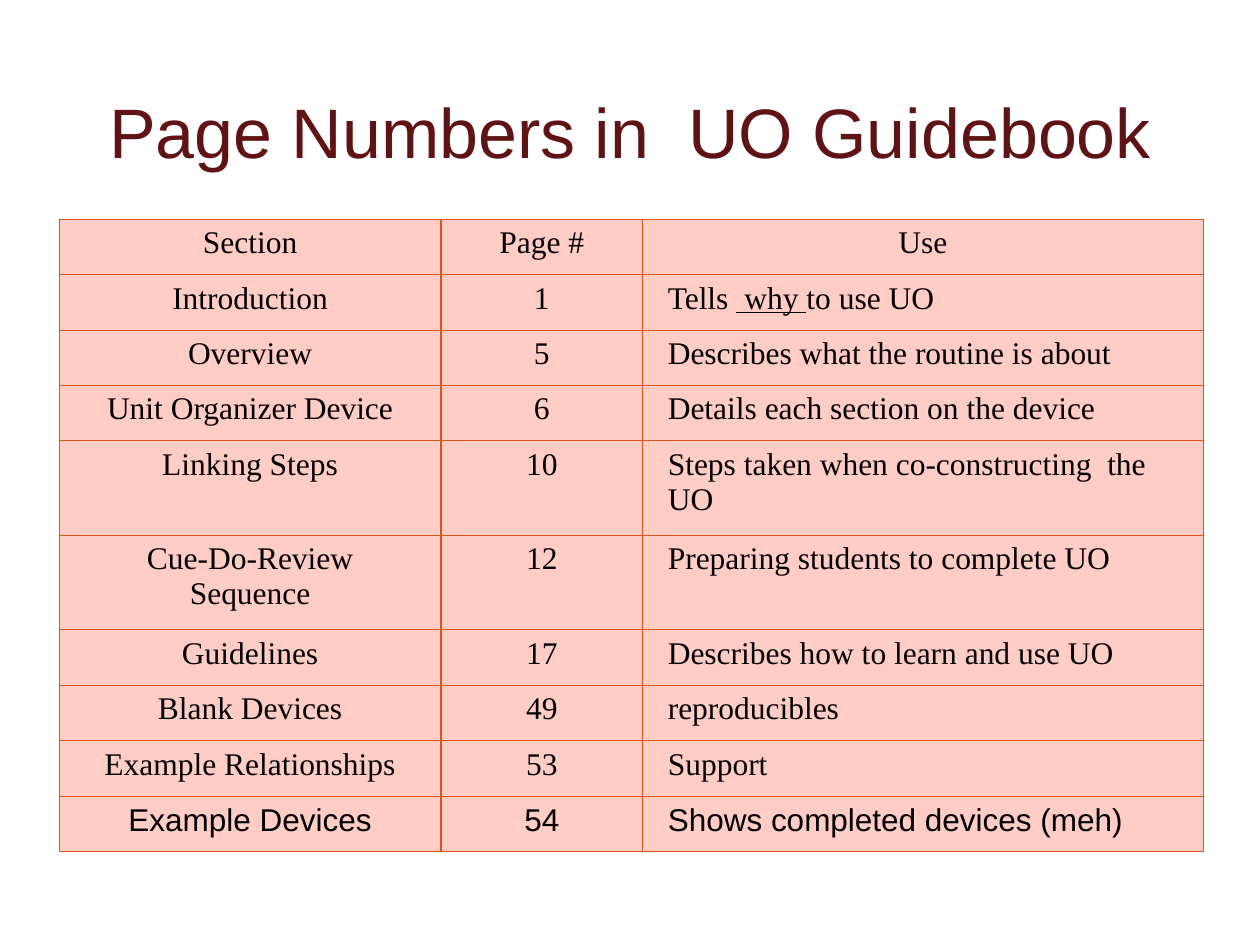
from lxml.etree import SubElement
from pptx import Presentation
from pptx.dml.color import RGBColor
from pptx.enum.text import MSO_ANCHOR, PP_ALIGN
from pptx.oxml.ns import qn
from pptx.util import Inches, Pt

COLORS = {"title": "601314", "text": "000000", "cell": "FFCCC6", "border": "DC561C"}
COLUMN_WIDTHS = [3.03, 1.6, 4.45]
TALL_SECTIONS = ["Linking Steps", "Cue-Do-Review Sequence"]
GUIDE = [
    ("Section", "Page #", ["Use"]),
    ("Introduction", "1", ["Tells ", " why ", "to use UO"]),
    ("Overview", "5", ["Describes what the routine is about"]),
    ("Unit Organizer Device", "6", ["Details each section on the device"]),
    ("Linking Steps", "10", ["Steps taken when co-constructing  the UO"]),
    ("Cue-Do-Review Sequence", "12", ["Preparing students to complete UO"]),
    ("Guidelines", "17", ["Describes how to learn and use UO"]),
    ("Blank Devices", "49", ["reproducibles"]),
    ("Example Relationships", "53", ["Support"]),
    ("Example Devices", "54", ["Shows completed devices (meh)"]),
]


def style_paragraph(paragraph, font_name, size, color, alignment):
    paragraph.alignment = alignment
    paragraph.font.name = font_name
    paragraph.font.size = Pt(size)
    paragraph.font.color.rgb = RGBColor.from_string(COLORS[color])


def add_borders(cell):
    properties = cell._tc.get_or_add_tcPr()
    for side in ("lnL", "lnR", "lnT", "lnB"):
        line = SubElement(properties, qn(f"a:{side}"), w=str(Pt(0.75)))
        fill = SubElement(line, qn("a:solidFill"))
        SubElement(fill, qn("a:srgbClr"), val=COLORS["border"])


prs = Presentation()
prs.slide_width, prs.slide_height = Inches(10), Inches(7.5)
slide = prs.slides.add_slide(prs.slide_layouts[6])

title = slide.shapes.add_textbox(Inches(0.75), Inches(0.5), Inches(8.5), Inches(0.92)).text_frame
title.word_wrap = True
title.vertical_anchor = MSO_ANCHOR.BOTTOM
title.text = "Page Numbers in  UO Guidebook"
style_paragraph(title.paragraphs[0], "Arial", 40, "title", PP_ALIGN.CENTER)

guide_table = slide.shapes.add_table(
    len(GUIDE), len(COLUMN_WIDTHS), Inches(0.47), Inches(1.74), Inches(9.08), Inches(5.02)
).table
for column, width in zip(guide_table.columns, COLUMN_WIDTHS):
    column.width = Inches(width)

for row_index, (section, page, use) in enumerate(GUIDE):
    guide_table.rows[row_index].height = Inches(0.75 if section in TALL_SECTIONS else 0.44)
    font_name = "Arial" if section == "Example Devices" else "Times New Roman"
    for column_index, pieces in enumerate([[section], [page], use]):
        cell = guide_table.cell(row_index, column_index)
        cell.margin_left = cell.margin_right = Inches(0.2)
        cell.margin_top = cell.margin_bottom = Inches(0.05)
        add_borders(cell)
        cell.fill.solid()
        cell.fill.fore_color.rgb = RGBColor.from_string(COLORS["cell"])
        paragraph = cell.text_frame.paragraphs[0]
        left_aligned = row_index > 0 and column_index == 2
        alignment = PP_ALIGN.LEFT if left_aligned else PP_ALIGN.CENTER
        style_paragraph(paragraph, font_name, 18, "text", alignment)
        paragraph.font.bold = False
        for piece in pieces:
            run = paragraph.add_run()
            run.text = piece
            if piece == " why ":
                run.font.underline = True

prs.save("out.pptx")
